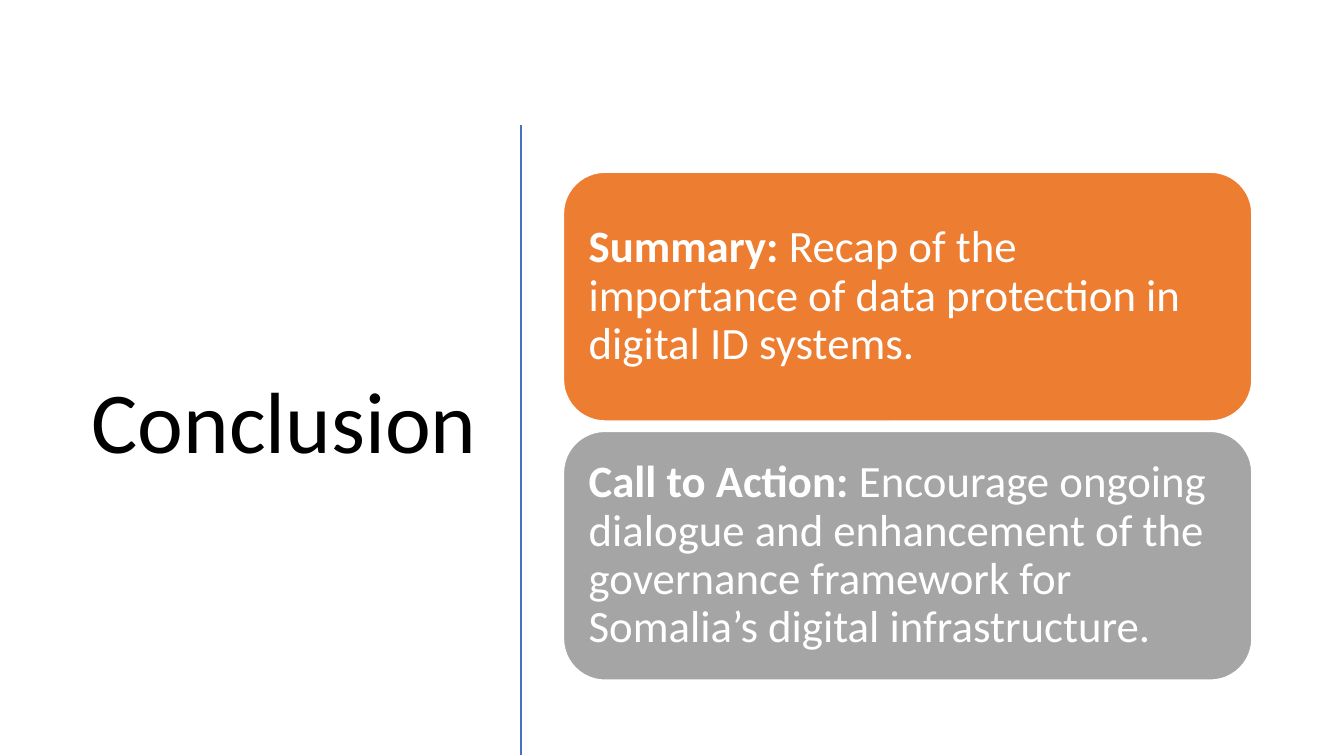
from pptx import Presentation
from pptx.dml.color import RGBColor
from pptx.enum.shapes import MSO_CONNECTOR, MSO_SHAPE
from pptx.enum.text import MSO_ANCHOR, PP_ALIGN
from pptx.oxml.ns import qn
from pptx.util import Cm, Pt
from lxml.etree import SubElement

TITLE_FORMAT = {"name": "Calibri", "size": Pt(62), "bold": False}
LEAD_FORMAT = {"name": "Calibri", "size": Pt(32), "bold": True}
BODY_FORMAT = {**LEAD_FORMAT, "bold": False}

POINTS = [
    ("Summary:", " Recap of the importance of data protection in digital ID systems.", "ED7D31"),
    ("Call to Action:", " Encourage ongoing dialogue and enhancement of the governance "
     "framework for Somalia’s digital infrastructure.", "A5A5A5"),
]


def color(hex_value):
    return RGBColor.from_string(hex_value)


def set_attributes(target, values):
    for name, value in values.items():
        setattr(target, name, value)


def add_run(paragraph, wording, font_format, hex_value):
    run = paragraph.add_run()
    run.text = wording
    set_attributes(run.font, font_format)
    run.font.color.rgb = color(hex_value)


def add_heading(slide, left, top, width, height):
    heading = slide.shapes.add_textbox(Cm(left), Cm(top), Cm(width), Cm(height))
    set_attributes(heading.text_frame, {"word_wrap": True, "vertical_anchor": MSO_ANCHOR.MIDDLE})
    paragraph = heading.text_frame.paragraphs[0]
    set_attributes(paragraph, {"alignment": PP_ALIGN.RIGHT, "line_spacing": 0.9})
    add_run(paragraph, "Conclusion", TITLE_FORMAT, "000000")


def add_divider(slide, left, top, height):
    divider = slide.shapes.add_connector(
        MSO_CONNECTOR.STRAIGHT, Cm(left), Cm(top), Cm(left), Cm(top + height))
    divider.line.color.rgb = color("4472C4")
    divider.line.width = Pt(2)
    SubElement(divider._element.spPr, qn("a:effectLst"))


def add_point(slide, point, left, top, width, height):
    lead, body, fill = point
    card = slide.shapes.add_shape(
        MSO_SHAPE.ROUNDED_RECTANGLE, Cm(left), Cm(top), Cm(width), Cm(height))
    card.shadow.inherit = False
    card.fill.solid()
    card.fill.fore_color.rgb = color(fill)
    card.line.color.rgb = color("FFFFFF")
    card.line.width = Pt(1)
    margins = {f"margin_{side}": Cm(0.33) for side in ("left", "top", "right", "bottom")}
    set_attributes(card.text_frame, {
        "word_wrap": True, "vertical_anchor": MSO_ANCHOR.MIDDLE, **margins})
    paragraph = card.text_frame.paragraphs[0]
    set_attributes(paragraph, {"alignment": PP_ALIGN.LEFT, "line_spacing": 0.9})
    add_run(paragraph, lead, LEAD_FORMAT, "FFFFFF")
    add_run(paragraph, body, BODY_FORMAT, "FFFFFF")


def add_points(slide, left, top, width, height, gap=0.26):
    card_height = (height - gap * (len(POINTS) - 1)) / len(POINTS)
    for row, point in enumerate(POINTS):
        add_point(slide, point, left, top + row * (card_height + gap), width, card_height)


def main():
    presentation = Presentation()
    set_attributes(presentation, {"slide_width": Cm(33.87), "slide_height": Cm(19.05)})
    slide = presentation.slides.add_slide(presentation.slide_layouts[6])

    # Title on the left, divider, then the closing points
    add_heading(slide, 1.32, 2.97, 10.95, 15.52)
    add_divider(slide, 13.13, 3.15, 15.88)
    add_points(slide, 14.2, 4.34, 17.35, 12.8)

    presentation.save("out.pptx")


if __name__ == "__main__":
    main()
